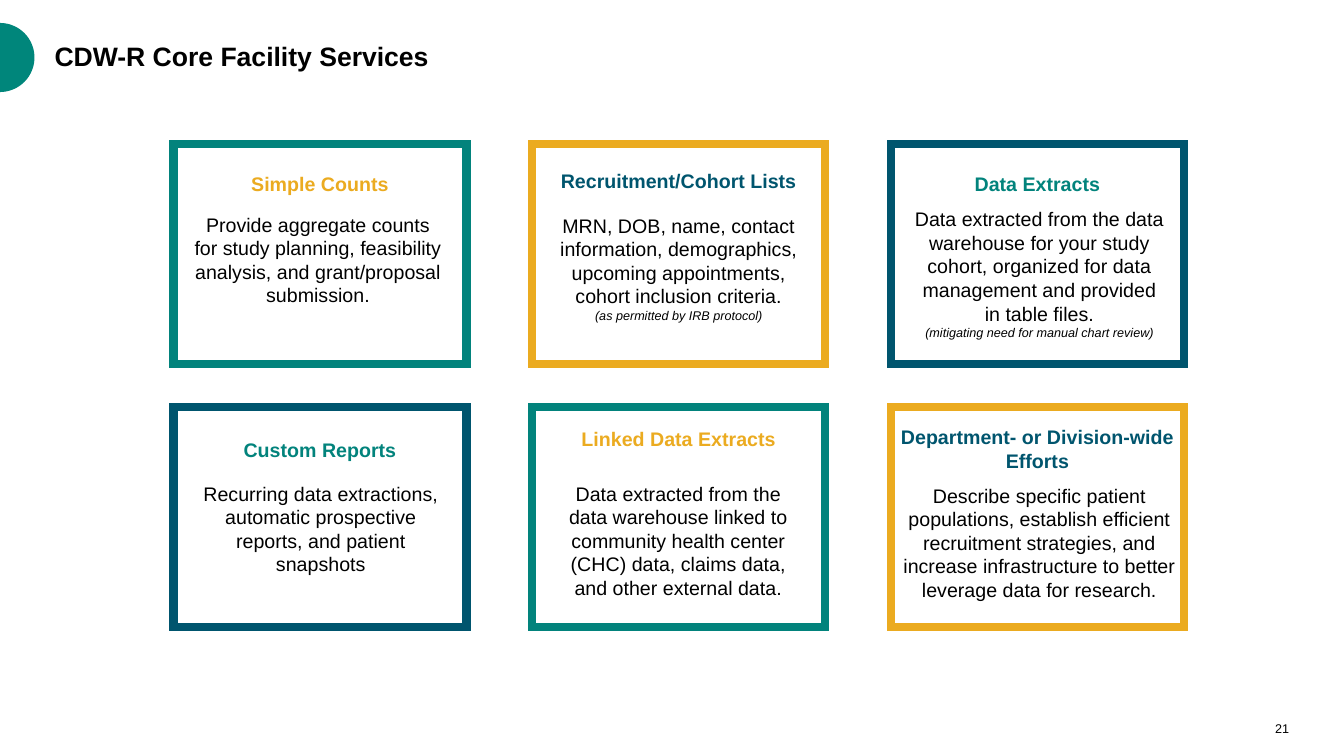
"""Build the slide of six core facility services."""
import math
from dataclasses import dataclass

from lxml import etree
from pptx import Presentation
from pptx.dml.color import RGBColor
from pptx.enum.shapes import MSO_SHAPE
from pptx.enum.text import MSO_ANCHOR, MSO_AUTO_SIZE, PP_ALIGN
from pptx.oxml.ns import qn
from pptx.util import Cm, Pt

RECT = MSO_SHAPE.RECTANGLE
TOP, MIDDLE, BOTTOM = MSO_ANCHOR.TOP, MSO_ANCHOR.MIDDLE, MSO_ANCHOR.BOTTOM
LEFT, CENTER, RIGHT = PP_ALIGN.LEFT, PP_ALIGN.CENTER, PP_ALIGN.RIGHT
GROW, FIXED = MSO_AUTO_SIZE.SHAPE_TO_FIT_TEXT, MSO_AUTO_SIZE.NONE
TITLE_ONLY = 5


@dataclass(frozen=True)
class Theme:
    font: str = "Arial"
    black: str = "000000"
    green: str = "02837C"
    gold: str = "EBAB20"
    navy: str = "00556E"
    accent: str = "00867B"
    title: float = 19
    text: float = 14
    small: float = 9
    border: float = 6


@dataclass(frozen=True)
class Card:
    heading: str
    body: str
    border: str
    color: str
    heading_y: float
    body_box: tuple
    note: str = ""
    heading_h: float = 0.86


T = Theme()
GRID_X, GRID_Y = 4.37, 3.63
STEP_X, STEP_Y = 9.04, 6.63
CARD_W, CARD_H = 7.39, 5.54
COLUMNS = 3

CARDS = [
    Card("Simple Counts",
         "Provide aggregate counts for study planning, feasibility analysis, "
         "and grant/proposal submission.",
         T.green, T.gold, 0.59, (0.23, 1.6, 6.83, 2.16)),
    Card("Recruitment/Cohort Lists",
         "MRN, DOB, name, contact information, demographics, upcoming "
         "appointments, cohort inclusion criteria.",
         T.gold, T.navy, 0.51, (0.28, 1.63, 6.83, 3.02),
         note="(as permitted by IRB protocol)"),
    Card("Data Extracts",
         "Data extracted from the data warehouse for your study cohort, "
         "organized for data management and provided in table files.",
         T.navy, T.green, 0.59, (0.33, 1.47, 6.83, 3.63),
         note="(mitigating need for manual chart review)"),
    Card("Custom Reports",
         "Recurring data extractions, automatic prospective reports, "
         "and patient snapshots",
         T.navy, T.green, 0.64, (0.3, 1.75, 6.83, 1.68)),
    Card("Linked Data Extracts",
         "Data extracted from the data warehouse linked to community health "
         "center (CHC) data, claims data, and other external data.",
         T.green, T.gold, 0.38, (0.41, 1.75, 6.55, 2.16)),
    Card("Department- or Division-wide Efforts",
         "Describe specific patient populations, establish efficient "
         "recruitment strategies, and increase infrastructure to better "
         "leverage data for research.",
         T.gold, T.navy, 0.33, (0.05, 1.8, 7.39, 3.25), heading_h=1.45),
]


def write(p, text, size=T.text, color=T.black, bold=False, italic=False,
          align=CENTER, spacing=1.0):
    """Write one formatted run into a paragraph."""
    p.alignment, p.line_spacing = align, spacing
    r = p.add_run()
    r.text = text
    r.font.name, r.font.size = T.font, Pt(size)
    r.font.bold, r.font.italic = bold, italic
    r.font.color.rgb = RGBColor.from_string(color)


def setup_frame(sp, anchor=TOP, auto_size=GROW):
    """Set wrapping and anchoring, and return the text frame."""
    tf = sp.text_frame
    tf.word_wrap, tf.auto_size, tf.vertical_anchor = True, auto_size, anchor
    return tf


def add_text(shapes, box, text, anchor=TOP, auto_size=GROW, **fmt):
    """Add a text box and return its text frame."""
    tf = setup_frame(shapes.add_textbox(*map(Cm, box)), anchor, auto_size)
    write(tf.paragraphs[0], text, **fmt)
    return tf


def add_title(s, text):
    """Place and fill the title placeholder."""
    sp = s.shapes.title
    sp.left, sp.top, sp.width, sp.height = map(Cm, (1.12, 0.6, 31.62, 1.73))
    tf = setup_frame(sp, MIDDLE, FIXED)
    write(tf.paragraphs[0], text, size=T.title, bold=True, align=LEFT,
          spacing=0.9)


def add_half_disc(s, center_y, radius, steps=48):
    """Draw a half disc against the left slide edge."""
    angles = [math.pi * (i / steps - 0.5) for i in range(steps + 1)]
    points = [(Cm(radius * math.cos(a)), Cm(center_y + radius * math.sin(a)))
              for a in angles]
    fb = s.shapes.build_freeform(*points[0])
    fb.add_line_segments(points[1:], close=True)
    sp = fb.convert_to_shape()
    sp.shadow.inherit = False
    sp.fill.solid()
    sp.fill.fore_color.rgb = RGBColor.from_string(T.accent)
    sp.line.fill.background()


def add_frame(shapes, box, color):
    """Add an unfilled rectangle with a thick, sharp-cornered border."""
    sp = shapes.add_shape(RECT, *map(Cm, box))
    sp.shadow.inherit = False
    sp.fill.background()
    sp.line.color.rgb = RGBColor.from_string(color)
    sp.line.width = Pt(T.border)
    ln = sp.element.spPr.find(qn("a:ln"))
    etree.SubElement(ln, qn("a:miter"), lim="800000")


def add_card(s, card, x, y):
    """Add a grouped frame with its heading and description."""
    shapes = s.shapes.add_group_shape().shapes
    add_frame(shapes, (x, y, CARD_W, CARD_H), card.border)
    add_text(shapes, (x, y + card.heading_y, CARD_W, card.heading_h),
             card.heading, color=card.color, bold=True)
    dx, dy, w, h = card.body_box
    tf = add_text(shapes, (x + dx, y + dy, w, h), card.body)
    if card.note:
        write(tf.add_paragraph(), card.note, size=T.small, italic=True)


def main():
    """Assemble and save the slide."""
    prs = Presentation()
    prs.slide_width, prs.slide_height = Cm(33.87), Cm(19.05)
    s = prs.slides.add_slide(prs.slide_layouts[TITLE_ONLY])
    add_half_disc(s, 1.45, 0.87)
    add_title(s, "CDW-R Core Facility Services")
    add_text(s.shapes, (31.62, 17.65, 1.12, 1.02), "21", anchor=BOTTOM,
             auto_size=FIXED, size=T.small, align=RIGHT)
    for i, card in enumerate(CARDS):
        row, col = divmod(i, COLUMNS)
        add_card(s, card, GRID_X + col * STEP_X, GRID_Y + row * STEP_Y)
    prs.save("out.pptx")


if __name__ == "__main__":
    main()
